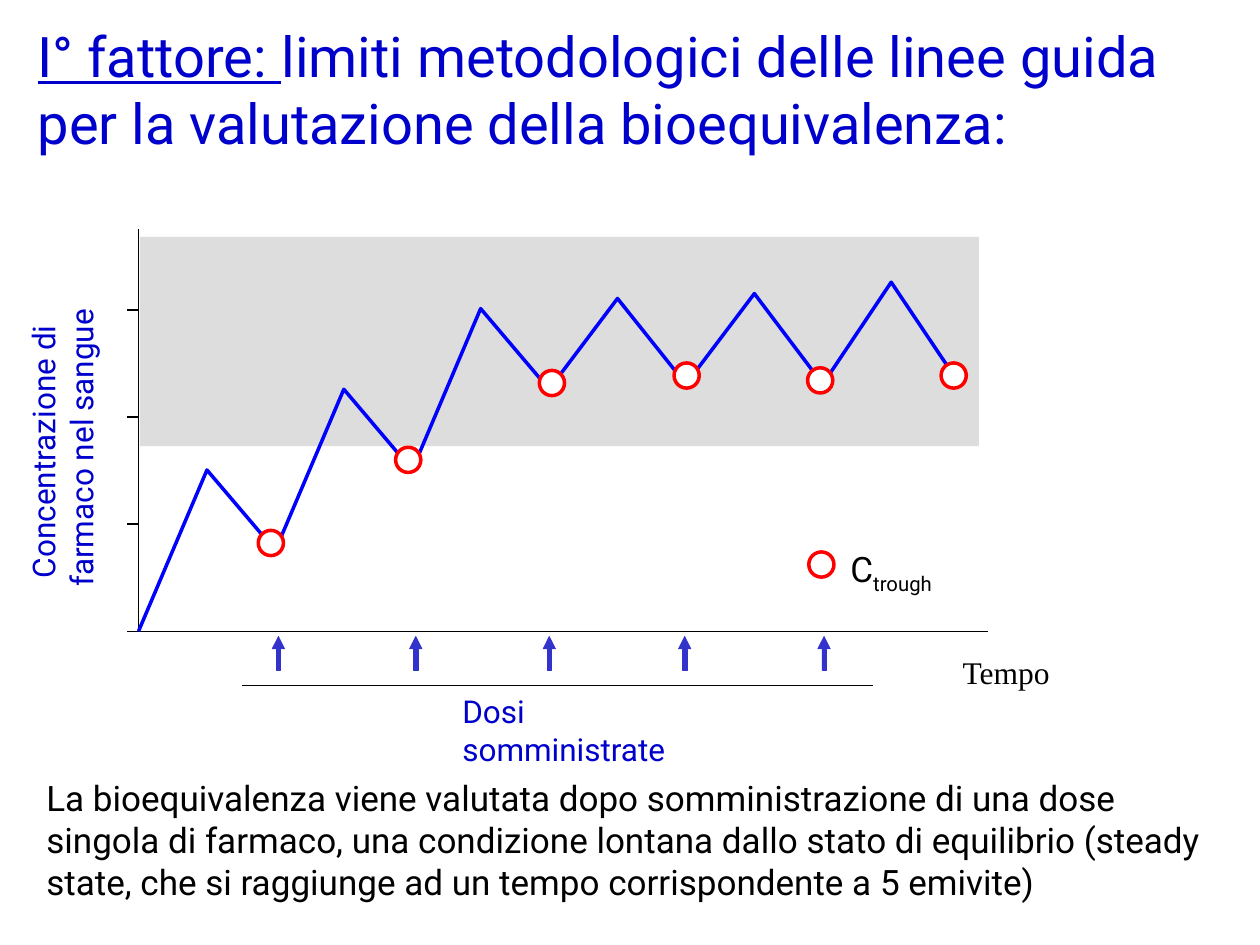
"""Build the slide on the methodological limits of bioequivalence guidelines."""
from lxml.etree import SubElement
from pptx import Presentation
from pptx.dml.color import RGBColor
from pptx.enum.shapes import MSO_CONNECTOR as CONNECTOR, MSO_SHAPE as SHAPE
from pptx.enum.text import MSO_AUTO_SIZE as AUTOSIZE, PP_ALIGN as ALIGN
from pptx.oxml.ns import qn
from pptx.util import Pt

rgb = RGBColor.from_string


def add_text(text, at, size=18, color="0000CC", font="Roboto", inset=0, wrap=True, align=ALIGN.LEFT):
    """Add a text box; a newline splits paragraphs and a bar splits runs."""
    box = slide.shapes.add_textbox(*map(Pt, at))
    frame = box.text_frame
    frame.word_wrap = wrap
    frame.auto_size = AUTOSIZE.SHAPE_TO_FIT_TEXT
    frame.margin_left = frame.margin_right = Pt(inset)
    frame.margin_top = frame.margin_bottom = Pt(inset / 2)
    runs = []
    for index, line in enumerate(text.split("\n")):
        paragraph = frame.add_paragraph() if index else frame.paragraphs[0]
        paragraph.alignment = align
        for part in line.split("|"):
            run = paragraph.add_run()
            run.text = part
            run.font.size = Pt(size)
            run.font.name = font
            run.font.color.rgb = rgb(color)
            runs.append(run)
    return box, runs


def paint(shape, fill=None, line=None, width=0.75):
    """Set the fill and outline of a shape and remove its shadow."""
    shape.shadow.inherit = False
    if fill:
        shape.fill.solid()
        shape.fill.fore_color.rgb = rgb(fill)
    else:
        shape.fill.background()
    if line:
        shape.line.color.rgb = rgb(line)
        shape.line.width = Pt(width)
    else:
        shape.line.fill.background()


deck = Presentation()
deck.slide_width, deck.slide_height = Pt(720), Pt(540)
slide = deck.slides.add_slide(deck.slide_layouts[6])

title, title_runs = add_text(
    "I° fattore: |limiti metodologici delle linee guida per la valutazione della bioequivalenza:",
    (14.4, 8.6, 683.3, 84.2), size=32, inset=7.2)
title_runs[0].font.underline = True
add_text("La bioequivalenza viene valutata dopo somministrazione di una dose singola di farmaco, "
         "una condizione lontana dallo stato di equilibrio (steady state, che si raggiunge ad un "
         "tempo corrispondente a 5 emivite)",
         (19.4, 439.9, 677.5, 79.9), size=20, color="000000", inset=7.2)

steady_band = slide.shapes.add_shape(SHAPE.RECTANGLE, Pt(79.9), Pt(135.4), Pt(479.5), Pt(119.5))
paint(steady_band, fill="DDDDDD")

axis_label, _ = add_text("Concentrazione di\n farmaco nel sangue", (-82.8, 236.2, 236.9, 43.9),
                         align=ALIGN.CENTER)
axis_label.rotation = 270
add_text("Tempo", (550.1, 373, 50.4, 21.6), color="000000", font="Times New Roman", wrap=False)
add_text("Dosi somministrate", (264.2, 395.3, 152.6, 21.6))

axis_x, base_y, tick_gap = 79.2, 360.7, 61.2
ticks = [(72.7, base_y - tick_gap * i, axis_x, base_y - tick_gap * i) for i in range(4)]
time_axis = (axis_x, base_y, 564.5, base_y)
concentration_axis = (axis_x, 131, axis_x, base_y)
dose_rule = (138.2, 391.7, 499, 391.7)
for ends in [time_axis, concentration_axis, dose_rule, *ticks]:
    rule = slide.shapes.add_connector(CONNECTOR.STRAIGHT, *map(Pt, ends))
    rule.line.color.rgb = rgb("000000")
    rule.line.width = Pt(0.75)
    SubElement(rule._element.spPr, qn("a:effectLst"))

for x in (159.1, 237.6, 313.9, 391.3, 470.9):
    shaft = [(x - 1.2, 383), (x - 1.2, 370.8), (x + 1.2, 370.8), (x + 1.2, 383)]
    head = [(x - 3.6, 370.8), (x, 363.6), (x + 3.6, 370.8)]
    builder = slide.shapes.build_freeform(*map(Pt, shaft[0]))
    builder.add_line_segments([(Pt(px), Pt(py)) for px, py in shaft[1:]])
    builder.move_to(*map(Pt, head[0]))
    builder.add_line_segments([(Pt(px), Pt(py)) for px, py in head[1:]])
    paint(builder.convert_to_shape(), fill="3333CC", line="3333CC", width=0.25)

levels = [base_y, 268.6, 314.6, 222.5, 268.6, 176.4, 222.5, 170.6, 219.6, 167.8, 219.6, 161.3, 219.6]
curve = [(Pt(axis_x + 39.1 * i), Pt(y)) for i, y in enumerate(levels)]
builder = slide.shapes.build_freeform(*curve[0])
builder.add_line_segments(curve[1:], close=False)
paint(builder.convert_to_shape(), line="0000FF", width=2)

troughs = [(147.6, 303.1), (226.1, 255.6), (308.2, 211.7), (385.2, 207.4), (461.5, 210.2), (537.8, 207.4)]
legend_marker = (462.2, 315.4)
for x, y in [*troughs, legend_marker]:
    marker = slide.shapes.add_shape(SHAPE.OVAL, Pt(x), Pt(y), Pt(14.4), Pt(14.4))
    paint(marker, fill="FFFFFF", line="FF0000", width=2)

legend, legend_runs = add_text("C|trough", (478.8, 309.6, 65.5, 31.7), size=20, color="000000",
                               inset=7.2, wrap=False)
legend_runs[1]._r.get_or_add_rPr().set("baseline", "-25000")

deck.save("out.pptx")
